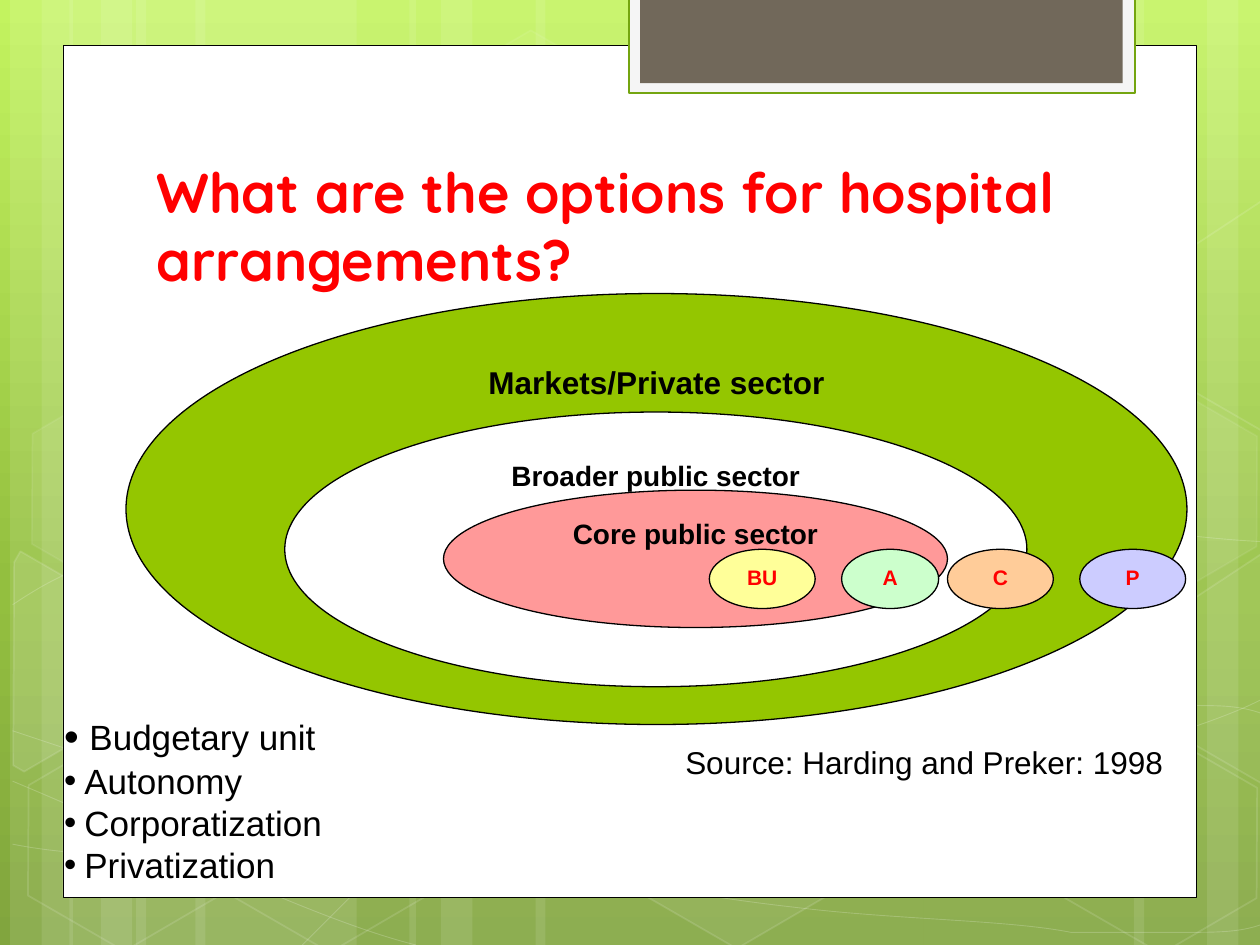
from copy import deepcopy
from math import cos, radians, sin

from lxml import etree
from pptx import Presentation
from pptx.dml.color import RGBColor
from pptx.enum.shapes import MSO_SHAPE
from pptx.enum.text import MSO_ANCHOR, MSO_AUTO_SIZE, PP_ALIGN
from pptx.oxml.ns import qn
from pptx.util import Inches, Pt

RECT, OVAL, HEX = MSO_SHAPE.RECTANGLE, MSO_SHAPE.OVAL, MSO_SHAPE.HEXAGON
TOP, BASE = MSO_ANCHOR.TOP, MSO_ANCHOR.BOTTOM
LEFT, MID = PP_ALIGN.LEFT, PP_ALIGN.CENTER
FIXED = MSO_AUTO_SIZE.NONE
WIDE, HIGH = Inches(10), Inches(7.5)
COLS, ROWS = 100, 75
CELL = WIDE // COLS
TILT = 30
WHITE, BLACK, RED = "FFFFFF", "000000", "FF0000"

BANDS = [(10.8, 17.5), (0.8, 5), (3.3, 8.3), (15.5, 17.5), (5.5, 5), (8, 8.3),
         (73.3, 17.5), (95.8, 5), (90, 8.3), (42.5, 30.8), (32.5, 5), (35, 8.3)]
WAVES = [
    [(0.7, 67.3), (6.1, 67.6), (11.5, 67.9), (19, 67.8), (26.5, 67.7), (35.8, 67.5),
     (45.8, 66.5), (55.8, 65.5), (70, 63.6), (79.2, 61.7), (88.3, 59.8), (97.7, 56.8),
     (100.7, 55.1)],
    [(0.7, 47.7), (3.6, 46.1), (6.5, 44.6), (12.1, 43.1), (17.8, 41.6), (25.9, 39.4),
     (34.7, 38.7), (43.6, 38), (54.4, 37.9), (65.4, 38.7), (76.4, 39.5), (94.7, 42.6),
     (100.7, 43.4)],
    [(0.6, 61.7), (12.7, 67.2), (24.7, 72.7), (33.4, 74.9)],
    [(0.7, 57.8), (3.8, 58.9), (7, 60), (12.8, 61.6), (18.6, 63.1), (27.3, 65.6),
     (35.7, 67.3), (44, 69), (54.5, 70.8), (62.8, 71.8), (71.1, 72.9), (80, 73.3),
     (85.3, 73.6), (90.5, 74), (91.9, 73.8), (94.5, 73.8), (97.1, 73.7), (98.9, 73.5),
     (100.7, 73.4)],
    [(24.2, 74.9), (26, 72.9), (27.8, 70.9), (30.2, 69.1), (32.6, 67.3), (36, 65.3),
     (38.8, 63.9), (41.6, 62.5), (43.3, 61.9), (47, 60.9), (50.6, 59.9), (57.3, 58.5),
     (60.8, 57.8), (64.4, 57.1), (64.9, 57.1), (68, 56.9), (71.1, 56.6), (76, 56.3),
     (79.4, 56.2), (82.9, 56.1), (88.6, 56.2), (88.6, 56.2), (90.8, 56.2), (93.1, 56.2),
     (95.3, 56.2), (97.1, 56.3), (98.8, 56.4), (100.6, 56.6)],
]
CELLS = [(33.4, 3.6, 4, 8), (49.7, 58.9, 6, 12), (1.1, 59.1, 0, 12), (1.4, 31.2, 7, 8),
         (17.4, 59.2, 0, 12), (75.3, 45.3, 10, 12), (83.4, 59.3, 0, 12),
         (83.4, 31.4, 7, 8)]
EDGE = [(-5.9, -3.5), (1.6, -7.9), (2.4, -7.4), (2.4, 9.3), (1.7, 9.7), (-5.9, 5.3)]
STUB = [(-2.8, -9), (-1.7, -9.7), (6, -5.3), (5.9, 3.5), (-1.6, 7.9), (-2.8, 7.2)]
CUTS = [(3.6, 53.5, STUB, 10), (98.5, 52, EDGE, 4), (98.5, 24.1, EDGE, 0)]
RINGS = [(0, 0, 84.2, 34.2, "94C600", "Markets/Private sector", 18, BLACK),
         (12.6, 9.4, 58.9, 21.8, WHITE, "Broader public sector", 16, BLACK),
         (25.2, 15.6, 40, 10.9, "FF9999", "Core public sector", 16, BLACK),
         (75.7, 20.3, 8.4, 4.7, "CCCCFF", "P", 12, RED),
         (65.2, 20.3, 8.4, 4.7, "FFCC99", "C", 12, RED),
         (56.8, 20.3, 7.7, 4.7, "CCFFCC", "A", 12, RED),
         (46.3, 20.3, 8.4, 4.7, "FFFF99", "BU", 12, RED)]
ITEMS = ["Budgetary unit", "Autonomy", "Corporatization", "Privatization"]


def span(box, x, y, w, h):
    """Turn cells counted from the corner of a box into lengths."""
    return [round(n * CELL) for n in (box[0] + x, box[1] + y, w, h)]


def paint(form, tone, node=None, alpha=100):
    """Give a fill one colour, and let it show through if alpha is below 100."""
    form.solid()
    form.fore_color.rgb = RGBColor.from_string(tone)
    if alpha < 100:
        etree.SubElement(node.find(qn("a:srgbClr")), qn("a:alpha"), val=str(alpha * 1000))


def style(shape, fill=None, line=None, width=1, fade=100, haze=100):
    """Set fill and outline; a missing colour means none."""
    shape.shadow.inherit = False
    props = shape.element.spPr
    shape.fill.background()
    shape.line.fill.background()
    if fill:
        shape.fill.solid()
        paint(shape.fill, fill, props.find(qn("a:solidFill")), fade)
    if line:
        shape.line.fill.solid()
        paint(shape.line.fill, line, props.find(qn("a:ln")).find(qn("a:solidFill")), haze)
        shape.line.width = Pt(width)
    return shape


def add(slide, kind, place, **look):
    """Add a preset shape with its look."""
    return style(slide.shapes.add_shape(kind, *place), **look)


def trace(slide, box, dots, shut, **look):
    """Draw an outline through points given in cells."""
    dots = [(box[0] + x, box[1] + y) for x, y in dots]
    pen = slide.shapes.build_freeform(*dots[0], scale=CELL)
    pen.add_line_segments(dots[1:], close=shut)
    return style(pen.convert_to_shape(), **look)


def bend(shape):
    """Join each three straight steps of an outline into one cubic curve."""
    steps = list(shape.element.iter(qn("a:lnTo")))
    for i in range(0, len(steps), 3):
        curve = etree.Element(qn("a:cubicBezTo"))
        steps[i].addprevious(curve)
        for step in steps[i:i + 3]:
            curve.append(step[0])
            step.getparent().remove(step)


def turn(x, y, angle):
    """Turn a point around the origin by degrees."""
    c, s = cos(radians(angle)), sin(radians(angle))
    return x * c - y * s, x * s + y * c


def write(shape, *lines, size=18, tone=BLACK, font="Arial", bold=False,
          align=LEFT, anchor=TOP, wrap=True):
    """Write one paragraph for each line in one format."""
    frame = shape.text_frame
    frame.text = "\n".join(lines)
    frame.auto_size, frame.word_wrap = FIXED, wrap
    frame.vertical_anchor = anchor
    for para in frame.paragraphs:
        para.alignment = align
        face = para.runs[0].font
        face.size, face.name, face.bold = Pt(size), font, bold
        paint(face.fill, tone)
    return frame


def lift(shape, place):
    """Move a placeholder to its place and to the front."""
    shape.left, shape.top, shape.width, shape.height = place
    shape.element.getparent().append(shape.element)
    return shape


def shade(slide):
    """Fill the background with the green fade."""
    fill = slide.background.fill
    fill.gradient()
    fill.gradient_angle = 270
    stops = next(slide.element.iter(qn("a:gsLst")))
    stops.insert(1, deepcopy(stops[0]))
    for stop, (spot, tone) in zip(fill.gradient_stops,
                                  [(0, "C3F35F"), (0.62, "93BF3F"), (1, "81A53E")]):
        stop.position, stop.color.rgb = spot, RGBColor.from_string(tone)


def scene(slide, box):
    """Draw the bands, waves and hexagons of the backdrop."""
    for x, w in BANDS:
        add(slide, RECT, span(box, x, 0, w, box[3]), fill=WHITE, fade=10)
    for knots in WAVES:
        bend(trace(slide, box, knots, False, line=WHITE, width=0.5, haze=20))
    for x, y, fade, haze in CELLS:
        cell = add(slide, HEX, span(box, x, y, 17.5, 15.2), fill=WHITE if fade else None,
                   line=WHITE, fade=fade, haze=haze)
        cell.adjustments[0], cell.adjustments[1] = 0.285, 1.155
        cell.rotation = TILT
    for x, y, dots, fade in CUTS:
        flat = [turn(*dot, -TILT) for dot in dots]
        cut = trace(slide, (box[0] + x, box[1] + y), flat, True,
                    fill=WHITE if fade else None, line=WHITE, fade=fade, haze=12)
        cut.rotation = TILT


def panel(slide, box):
    """Draw the white page with the tab at its top."""
    add(slide, RECT, span(box, 0, 0, *box[2:]), fill=WHITE, line=BLACK, width=0.5)
    add(slide, RECT, span(box, 44.9, -3.8, 40.2, 7.6), fill="F5F5F5", line="74A510", width=1.25)
    add(slide, RECT, span(box, 45.8, -3.8, 38.3, 6.8), fill="71685A")


def rings(slide, box):
    """Draw the nested sectors and the four options."""
    for x, y, w, h, fill, text, size, tone in RINGS:
        ring = add(slide, OVAL, span(box, x, y, w, h), fill=fill, line=BLACK, width=0.75)
        write(ring, text, size=size, tone=tone, bold=True, align=MID, wrap=w > 10)


def roster(slide, box):
    """Set the bulleted list of options, its first bullet larger."""
    body = lift(slide.placeholders[1], span(box, 0, 0, *box[2:]))
    frame = write(body, *ITEMS, size=20, wrap=False)
    frame.margin_top = Inches(0.1)
    for i, para in enumerate(frame.paragraphs):
        gap, grow = (0.16, 100) if i else (0.2, 120)
        para.line_spacing, para.space_before = 1.0, Pt(0)
        props = para._p.get_or_add_pPr()
        props.set("marL", str(Inches(gap)))
        props.set("indent", str(-Inches(gap)))
        etree.SubElement(props, qn("a:buSzPct"), val=str(grow * 1000))
        etree.SubElement(props, qn("a:buChar"), char="•")
    frame.paragraphs[0].space_after = Pt(1)


def main():
    """Build and save the slide."""
    deck = Presentation()
    deck.slide_width, deck.slide_height = WIDE, HIGH
    slide = deck.slides.add_slide(deck.slide_layouts[1])
    shade(slide)
    scene(slide, (0, 0, COLS, ROWS))
    panel(slide, (5, 3.6, 90, 67.6))
    title = lift(slide.shapes.title, span((11.4, 11.2), 0, 0, 76.8, 12.5))
    write(title, "What are the options for hospital arrangements?", size=32, tone=RED,
          font="Quicksand", bold=True, anchor=BASE)
    rings(slide, (10, 23.3, 84.2, 34.2))
    note = slide.shapes.add_textbox(*span((53.4, 58.5), 0, 0, 39.9, 4))
    write(note, "Source: Harding and Preker: 1998", wrap=False)
    roster(slide, (4.1, 55.8, 22.6, 15))
    deck.save("out.pptx")


if __name__ == "__main__":
    main()
